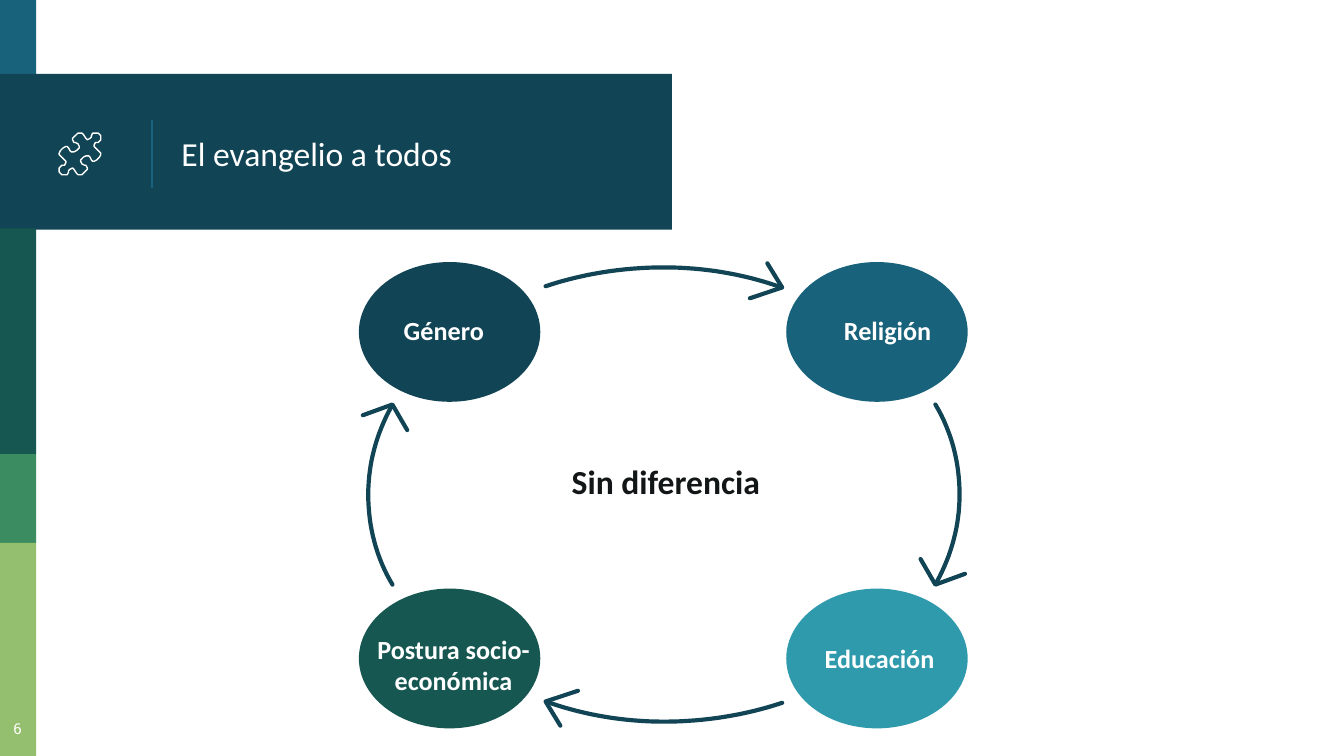
from lxml.etree import SubElement
from pptx import Presentation
from pptx.dml.color import RGBColor
from pptx.enum.shapes import MSO_CONNECTOR, MSO_SHAPE
from pptx.enum.text import MSO_ANCHOR, PP_ALIGN
from pptx.oxml.ns import qn
from pptx.util import Inches, Pt

NAVY, BLUE, TEAL, FOREST = "114454", "18637B", "309AAD", "165751"
GREEN, LIME, WHITE, INK = "3B8D61", "94BF6E", "FFFFFF", "131617"
CYCLE_CENTER = (4.94, 3.68)
PUZZLE_CENTER = (0.595, 1.145)

STRIPES = [
    (0, 0, 0.27, 0.58, BLUE),
    (0, 0.55, 5, 1.16, NAVY),
    (0, 1.7, 0.27, 1.68, FOREST),
    (0, 3.38, 0.27, 0.66, GREEN),
    (0, 4.04, 0.27, 1.59, LIME),
]
TOPICS = [
    ("Género ", 2.67, 1.95, NAVY, 2.51, 2.1),
    ("Religión", 5.85, 1.95, BLUE, 5.79, 2.1),
    ("Educación", 5.85, 4.38, TEAL, 5.73, 4.54),
    ("Postura socio-económica", 2.67, 4.38, FOREST, 2.56, 4.47),
]
ARROWS = [
    ([(4.06, 2.13), (4.33, 2.04), (4.63, 1.99), (4.94, 1.99),
      (5.24, 1.99), (5.53, 2.04), (5.79, 2.13)],
     [(5.58, 2.22), (5.82, 2.14), (5.71, 1.96)]),
    ([(6.96, 3.01), (7.08, 3.21), (7.14, 3.44), (7.14, 3.68),
      (7.14, 3.91), (7.08, 4.13), (6.97, 4.33)],
     [(6.85, 4.16), (6.96, 4.35), (7.18, 4.27)]),
]
PUZZLE_HALF = [
    (0.71, 1.06), (0.73, 1.06), (0.75, 1.04), (0.75, 1.01), (0.73, 0.99),
    (0.71, 0.99), (0.69, 0.99), (0.68, 1.01), (0.68, 1.02), (0.67, 1.03),
    (0.65, 1.04), (0.64, 1.03), (0.62, 1), (0.61, 0.99), (0.6, 0.99),
    (0.58, 0.99), (0.56, 1.01), (0.54, 1.03), (0.54, 1.04), (0.55, 1.06),
    (0.56, 1.06), (0.58, 1.07), (0.59, 1.09), (0.59, 1.1), (0.58, 1.11),
    (0.57, 1.12), (0.55, 1.13), (0.53, 1.13), (0.52, 1.12), (0.51, 1.1),
    (0.5, 1.09), (0.49, 1.09), (0.47, 1.1), (0.45, 1.12), (0.44, 1.14),
    (0.44, 1.15), (0.46, 1.17), (0.48, 1.19), (0.49, 1.2), (0.49, 1.21),
]


def color(value):
    """Turn a hex string into a colour."""
    return RGBColor.from_string(value)


def half_turn(points, center):
    """Rotate points by 180 degrees about a center."""
    return [(2 * center[0] - x, 2 * center[1] - y) for x, y in points]


def bezier(controls, steps=16):
    """Sample a chain of cubic curves that share their end points."""
    points = [controls[0]]
    for first in range(0, len(controls) - 1, 3):
        segment = controls[first:first + 4]
        for step in range(1, steps + 1):
            t = step / steps
            weights = ((1 - t) ** 3, 3 * t * (1 - t) ** 2, 3 * t * t * (1 - t), t ** 3)
            points.append(tuple(sum(w * p[axis] for w, p in zip(weights, segment))
                                for axis in (0, 1)))
    return points


def add_block(slide, preset, left, top, width, height, fill):
    """Add a filled preset shape without outline."""
    block = slide.shapes.add_shape(preset, Inches(left), Inches(top),
                                   Inches(width), Inches(height))
    block.shadow.inherit = False
    block.fill.solid()
    block.fill.fore_color.rgb = color(fill)
    block.line.fill.background()


def add_stroke(slide, points, stroke, weight, close=False):
    """Add an unfilled outline with round ends."""
    start, *rest = [(Inches(x), Inches(y)) for x, y in points]
    builder = slide.shapes.build_freeform(*start)
    builder.add_line_segments(rest, close=close)
    outline = builder.convert_to_shape()
    outline.shadow.inherit = False
    outline.fill.background()
    outline.line.color.rgb = color(stroke)
    outline.line.width = Pt(weight)
    outline.element.spPr.find(qn("a:ln")).set("cap", "rnd")


def add_divider(slide, x, top, bottom):
    """Add the thin vertical rule beside the title."""
    divider = slide.shapes.add_connector(MSO_CONNECTOR.STRAIGHT, Inches(x), Inches(top),
                                         Inches(x), Inches(bottom))
    divider.line.color.rgb = color(BLUE)
    divider.line.width = Pt(0.75)
    SubElement(divider.element.spPr, qn("a:effectLst"))


def write(frame, text, size, ink, font="Calibri", bold=False,
          align=PP_ALIGN.CENTER, inset=0, top_inset=0, anchor=MSO_ANCHOR.TOP):
    """Fill a text frame with one formatted paragraph."""
    frame.word_wrap = True
    frame.vertical_anchor = anchor
    frame.margin_left = frame.margin_right = frame.margin_bottom = Inches(inset)
    frame.margin_top = Inches(top_inset)
    paragraph = frame.paragraphs[0]
    paragraph.text = text
    paragraph.alignment = align
    paragraph.font.name = font
    paragraph.font.size = Pt(size)
    paragraph.font.bold = bold
    paragraph.font.color.rgb = color(ink)


def add_label(slide, left, top, width, height, text, size, ink, **style):
    """Add a text box with one paragraph."""
    label = slide.shapes.add_textbox(Inches(left), Inches(top), Inches(width), Inches(height))
    write(label.text_frame, text, size, ink, **style)


def place_title(slide, text):
    """Put the title placeholder on top of its band."""
    title = slide.shapes.title
    title.left, title.top = Inches(1.25), Inches(0.58)
    title.width, title.height = Inches(3.51), Inches(1.12)
    write(title.text_frame, text, 18, WHITE, align=PP_ALIGN.LEFT,
          inset=0.1, top_inset=0.1, anchor=MSO_ANCHOR.MIDDLE)
    title.element.getparent().append(title.element)


def add_cycle(slide):
    """Add the four topics, the arrows between them and the central message."""
    for _, left, top, fill, _, _ in TOPICS:
        add_block(slide, MSO_SHAPE.OVAL, left, top, 1.35, 1.04, fill)
    for shaft, head in ARROWS:
        for points in (bezier(shaft), head):
            add_stroke(slide, points, NAVY, 2.25)
            add_stroke(slide, half_turn(points, CYCLE_CENTER), NAVY, 2.25)
    for text, _, _, _, left, top in TOPICS:
        add_label(slide, left, top, 1.63, 0.8, text, 14, WHITE, bold=True, top_inset=0.24)
    add_label(slide, 4.14, 3.19, 1.63, 0.8, "Sin diferencia", 18, INK,
              bold=True, top_inset=0.24)


def main():
    """Build the slide and save it."""
    deck = Presentation()
    deck.slide_width = Inches(10)
    deck.slide_height = deck.slide_width * 9 // 16
    slide = deck.slides.add_slide(deck.slide_layouts[5])
    for left, top, width, height, fill in STRIPES:
        add_block(slide, MSO_SHAPE.RECTANGLE, left, top, width, height, fill)
    add_divider(slide, 1.13, 0.89, 1.4)
    place_title(slide, "El evangelio a todos")
    add_label(slide, -0.06, 5.27, 0.38, 0.35, "6", 8, WHITE,
              font="Roboto Slab", inset=0.1, top_inset=0.14)
    puzzle = PUZZLE_HALF + half_turn(PUZZLE_HALF, PUZZLE_CENTER)
    add_stroke(slide, puzzle, WHITE, 0.75, close=True)
    add_cycle(slide)
    deck.save("out.pptx")


if __name__ == "__main__":
    main()
